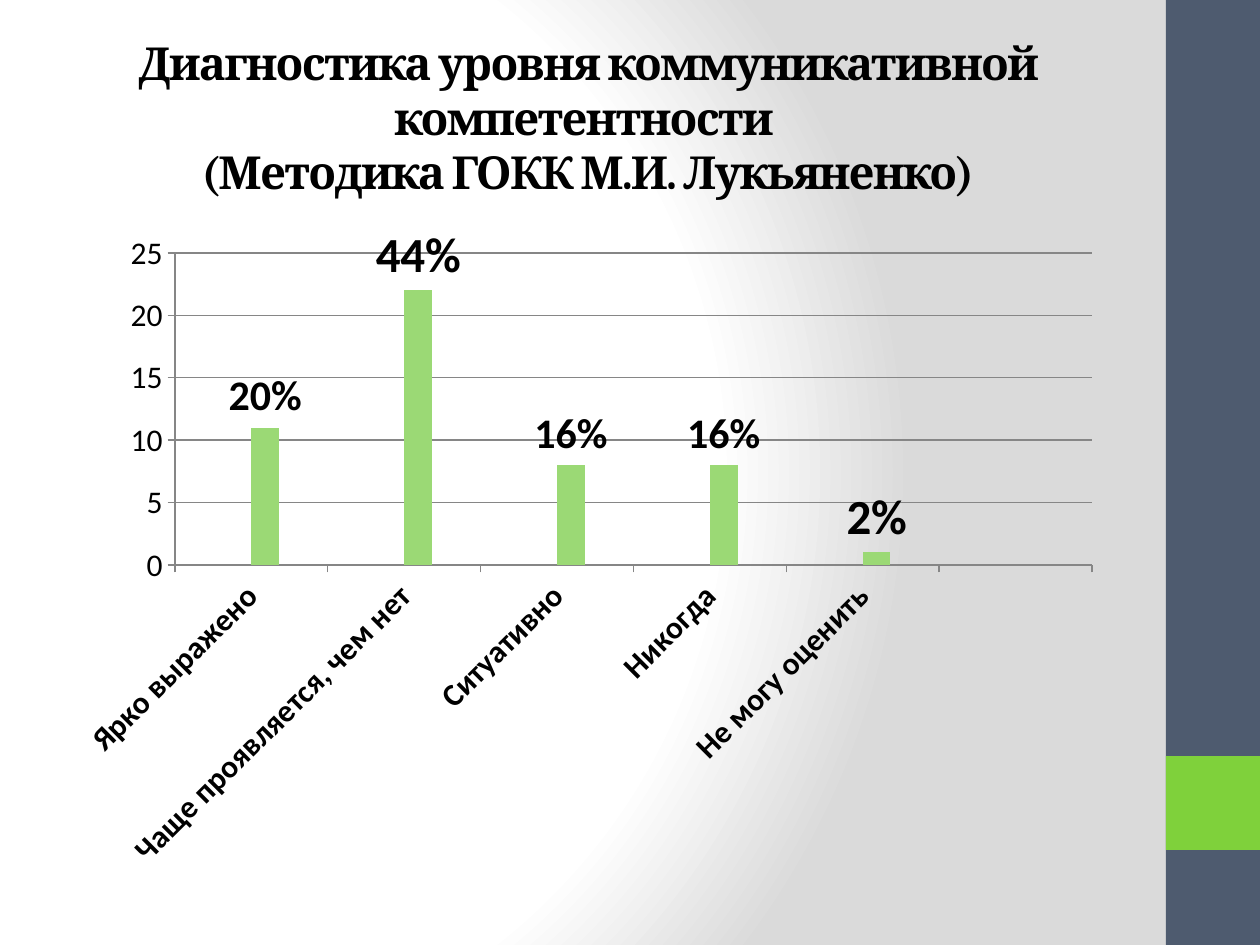
from lxml import etree
from pptx import Presentation
from pptx.chart.data import CategoryChartData
from pptx.dml.color import RGBColor
from pptx.enum.chart import XL_CHART_TYPE, XL_LABEL_POSITION, XL_TICK_MARK
from pptx.enum.shapes import MSO_SHAPE
from pptx.enum.text import MSO_ANCHOR, PP_ALIGN
from pptx.oxml import parse_xml
from pptx.oxml.ns import nsdecls, qn
from pptx.util import Pt

EMU_PER_PX = 914400 / 126
WIDTH, HEIGHT = 1260, 945
SIDEBAR_LEFT, SIDEBAR_WIDTH = 1166, 94

TITLE_LINES = [
    "Диагностика уровня коммуникативной компетентности ",
    "(Методика ГОКК М.И. Лукьяненко)",
]
CATEGORIES = ["Ярко выражено", "Чаще проявляется, чем нет", "Ситуативно",
              "Никогда", "Не могу оценить", ""]
VALUES = [11, 22, 8, 8, 1, None]
EMPTY = [None] * len(CATEGORIES)
SERIES = [
    ("Series 1", EMPTY, "7FD13B"),
    ("Series 2", EMPTY, "EA157A"),
    ("Series 3", VALUES, "9BD975"),
    ("Series 4", EMPTY, "00ADDC"),
]
POINT_LABELS = [("20%", 24), ("44%", 28), ("16%", 24), ("16%", 24), ("2%", 28)]


def px(length):
    return round(length * EMU_PER_PX)


def color(value):
    return RGBColor.from_string(value)


def apply(target, values):
    """Set each attribute named in the dict."""
    for name, value in values.items():
        setattr(target, name, value)


class SlideBuilder:
    title_font = {"name": "Cambria", "size": Pt(26), "bold": True}
    chart_font = {"name": "Calibri", "size": Pt(18), "bold": False}
    text_color = "000000"
    line_color = "868686"

    def __init__(self, slide):
        self.slide = slide

    def style_font(self, font, values):
        apply(font, values)
        font.color.rgb = color(self.text_color)

    def background(self, stops, focus):
        """Radial gradient; focus holds the l, t, r, b insets in percent."""
        stop_xml = "".join(
            f'<a:gs pos="{position * 1000}"><a:srgbClr val="{value}"/></a:gs>'
            for position, value in stops)
        insets = " ".join(f'{side}="{inset * 1000}"' for side, inset in zip("ltrb", focus))
        self.slide.element.cSld.insert(0, parse_xml(
            f'<p:bg {nsdecls("p", "a")}><p:bgPr><a:gradFill rotWithShape="1">'
            f'<a:gsLst>{stop_xml}</a:gsLst>'
            f'<a:path path="circle"><a:fillToRect {insets}/></a:path>'
            '</a:gradFill><a:effectLst/></p:bgPr></p:bg>'))

    def rectangle(self, left, top, width, height, fill):
        shape = self.slide.shapes.add_shape(
            MSO_SHAPE.RECTANGLE, px(left), px(top), px(width), px(height))
        shape.shadow.inherit = False
        shape.fill.solid()
        shape.fill.fore_color.rgb = color(fill)
        shape.line.fill.background()

    def title(self, left, top, width, height, lines):
        box = self.slide.shapes.add_textbox(px(left), px(top), px(width), px(height))
        frame = box.text_frame
        apply(frame, {"word_wrap": True, "vertical_anchor": MSO_ANCHOR.MIDDLE})
        paragraph = frame.paragraphs[0]
        paragraph.alignment = PP_ALIGN.CENTER
        for index, line in enumerate(lines):
            if index:
                paragraph.add_line_break()
            run = paragraph.add_run()
            run.text = line
            self.style_font(run.font, self.title_font)
            run.font._element.set("spc", "-100")

    def column_chart(self, left, top, width, height, plot):
        """Clustered columns; plot is the inner plot area in slide px."""
        data = CategoryChartData()
        data.categories = CATEGORIES
        for name, values, _ in SERIES:
            data.add_series(name, values)
        chart = self.slide.shapes.add_chart(
            XL_CHART_TYPE.COLUMN_CLUSTERED,
            px(left), px(top), px(width), px(height), data).chart
        apply(chart, {"has_legend": False, "has_title": False})
        self.style_font(chart.font, self.chart_font)
        apply(chart.plots[0], {"gap_width": 150, "overlap": 0, "vary_by_categories": False})
        for series, (_, _, fill) in zip(chart.plots[0].series, SERIES):
            series.format.fill.solid()
            series.format.fill.fore_color.rgb = color(fill)
        self.point_labels(chart.plots[0].series[2])
        self.axes(chart)
        plot_left, plot_top, plot_width, plot_height = plot
        self.plot_layout(chart, {
            "x": (plot_left - left) / width, "y": (plot_top - top) / height,
            "w": plot_width / width, "h": plot_height / height})

    def point_labels(self, series):
        for index, (text, size) in enumerate(POINT_LABELS):
            label = series.points[index].data_label
            run = label.text_frame.paragraphs[0].add_run()
            run.text = text
            self.style_font(run.font, {**self.chart_font, "size": Pt(size), "bold": True})
            label.position = XL_LABEL_POSITION.OUTSIDE_END

    def axes(self, chart):
        category, value = chart.category_axis, chart.value_axis
        apply(value, {"minimum_scale": 0, "maximum_scale": 25, "major_unit": 5,
                      "has_major_gridlines": True})
        for axis, bold in ((category, True), (value, False)):
            axis.major_tick_mark = XL_TICK_MARK.OUTSIDE
            self.style_font(axis.tick_labels.font, {**self.chart_font, "bold": bold})
        for part in (category, value, value.major_gridlines):
            part.format.line.width = Pt(0.75)
            part.format.line.color.rgb = color(self.line_color)
        category._element.find(qn("c:txPr")).find(qn("a:bodyPr")).set("rot", "-2700000")

    def plot_layout(self, chart, fractions):
        plot_area = chart._chartSpace.chart.plotArea
        for layout in plot_area.findall(qn("c:layout")):
            plot_area.remove(layout)
        layout = etree.Element(qn("c:layout"))
        manual = etree.SubElement(layout, qn("c:manualLayout"))
        settings = {"layoutTarget": "inner", "xMode": "edge", "yMode": "edge"}
        settings.update((name, f"{value:.4f}") for name, value in fractions.items())
        for name, value in settings.items():
            etree.SubElement(manual, qn(f"c:{name}")).set("val", value)
        plot_area.insert(0, layout)


def main():
    presentation = Presentation()
    apply(presentation, {"slide_width": px(WIDTH), "slide_height": px(HEIGHT)})
    builder = SlideBuilder(presentation.slides.add_slide(presentation.slide_layouts[6]))
    builder.background([(0, "FFFFFF"), (75, "FFFFFF"), (100, "DADADA")], (20, 50, 100, 50))
    builder.rectangle(SIDEBAR_LEFT, 0, SIDEBAR_WIDTH, HEIGHT, "4E5B6F")
    builder.rectangle(SIDEBAR_LEFT, 756, SIDEBAR_WIDTH, SIDEBAR_WIDTH, "7FD13B")
    builder.title(63, 38, 1050, 158, TITLE_LINES)
    builder.column_chart(63, 220, 1050, 662, plot=(175, 253, 917, 312))
    presentation.save("out.pptx")


if __name__ == "__main__":
    main()
